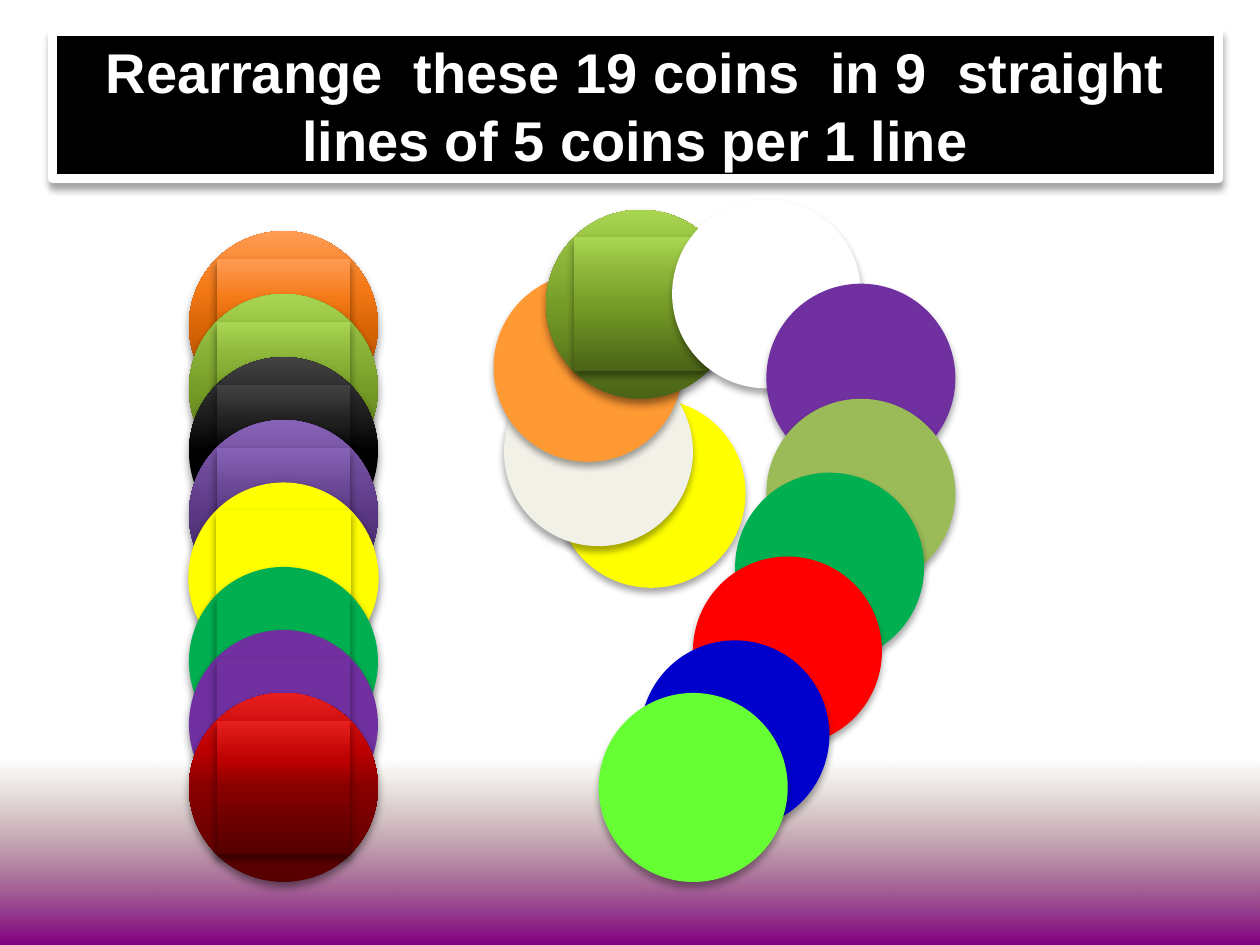
from math import sqrt
from lxml.etree import SubElement
from pptx import Presentation
from pptx.dml.color import RGBColor as RGB
from pptx.enum.shapes import MSO_SHAPE as SHAPE
from pptx.enum.text import MSO_ANCHOR as ANCHOR, PP_ALIGN as ALIGN
from pptx.oxml.ns import qn
from pptx.util import Cm, Pt

TITLE = "Rearrange  these 19 coins  in 9  straight lines of 5 coins per 1 line"
COLORS = {
    "black": "000000", "white": "FFFFFF", "yellow": "FFFF00", "cream": "F2F1E8",
    "amber": "FF9933", "purple": "7030A0", "olive": "9BBB59", "green": "00B050",
    "red": "FF0000", "blue": "0000CC", "lime": "66FF33",
}
GRADIENTS = {
    "orange shine": ("8B3F00", "DA6606", "F47917", "FF9C54"),
    "green shine": ("4A6316", "769C27", "89B137", "A9D651"),
    "black shine": ("000000", "000000", "1D1D1D", "424242"),
    "purple shine": ("372152", "593782", "6A4895", "8763B7"),
    "red shine": ("540000", "880000", "BC0000", "E71F1F"),
}
SHINE_STOPS = (0, 50, 70, 100)
LOOP = [
    ("yellow", 11.22, 8.04), ("cream", 10.16, 7.2), ("amber", 9.95, 5.5),
    ("green shine", 11.01, 4.23), ("white", 13.55, 4.02), ("purple", 15.45, 5.72),
    ("olive", 15.45, 8.04), ("green", 14.82, 9.53), ("red", 13.97, 11.22),
    ("blue", 12.91, 12.91), ("lime", 12.07, 13.97),
]
STACKS = [
    (4.66, ["orange shine", "green shine", "black shine", "purple shine", "yellow"]),
    (11.43, ["green", "purple", "red shine"]),
]
STACK_X, STACK_STEP = 3.81, 1.27
COIN = 3.81
CORE = COIN / sqrt(2)
SOFT = {"alpha": 35, "blur": 4, "dist": 3}
STRONG = {"alpha": 45, "blur": 5, "dist": 3}


def add_color(parent, color, alpha=100):
    clr = SubElement(parent, qn("a:srgbClr"), val=color)
    if alpha < 100:
        SubElement(clr, qn("a:alpha"), val=str(alpha * 1000))


def set_gradient(sp, stops, angle):
    sp.fill.gradient()
    sp.fill.gradient_angle = angle
    gs_lst = sp.element.spPr.find(".//" + qn("a:gsLst"))
    for gs in list(gs_lst):
        gs_lst.remove(gs)
    for pos, color, alpha in stops:
        add_color(SubElement(gs_lst, qn("a:gs"), pos=str(pos * 1000)), color, alpha)


def set_shadow(sp, alpha, blur, dist):
    effects = sp.element.spPr.find(qn("a:effectLst"))
    shadow = SubElement(effects, qn("a:outerShdw"), blurRad=str(Pt(blur)),
                        dist=str(Pt(dist)), dir="5400000", rotWithShape="0")
    add_color(shadow, COLORS["black"], alpha)


def add_shape(shapes, kind, x, y, w, h, fill=None, line=None, shadow=None):
    sp = shapes.add_shape(kind, Cm(x), Cm(y), Cm(w), Cm(h))
    sp.shadow.inherit = False
    if fill in GRADIENTS:
        set_gradient(sp, [(pos, c, 100) for pos, c in zip(SHINE_STOPS, GRADIENTS[fill])], 90)
    elif fill:
        sp.fill.solid()
        sp.fill.fore_color.rgb = RGB.from_string(COLORS[fill])
    if line:
        color, width = line
        sp.line.color.rgb = RGB.from_string(COLORS[color])
        sp.line.width = Pt(width)
    else:
        sp.line.fill.background()
    if shadow:
        set_shadow(sp, **shadow)
    return sp


def add_coin(shapes, fill, x, y, shadow, core_shadow, line=None):
    group = shapes.add_group_shape()
    inset = (COIN - CORE) / 2
    add_shape(group.shapes, SHAPE.OVAL, x, y, COIN, COIN, fill, line, shadow)
    add_shape(group.shapes, SHAPE.RECTANGLE, x + inset, y + inset, CORE, CORE,
              fill, line, core_shadow)


def add_title(shapes):
    sp = add_shape(shapes, SHAPE.RECTANGLE, 1.06, 0.64, 23.5, 2.96,
                   "black", ("white", 5), SOFT)
    tf = sp.text_frame
    tf.word_wrap = True
    tf.vertical_anchor = ANCHOR.MIDDLE
    p = tf.paragraphs[0]
    p.alignment = ALIGN.CENTER
    r = p.add_run()
    r.text = TITLE
    for name, value in {"name": "Arial", "size": Pt(32), "bold": True}.items():
        setattr(r.font, name, value)
    r.font.color.rgb = RGB.from_string(COLORS["white"])


def main():
    prs = Presentation()
    prs.slide_width, prs.slide_height = Cm(25.4), Cm(19.05)
    shapes = prs.slides.add_slide(prs.slide_layouts[6]).shapes
    band = add_shape(shapes, SHAPE.RECTANGLE, 0, 15.32, 25.4, 3.73)
    set_gradient(band, [(0, "765E2F", 0), (100, "800080", 100)], 270)
    for fill, x, y in LOOP:
        shiny = fill in GRADIENTS
        add_coin(shapes, fill, x, y, STRONG if shiny else SOFT, STRONG if shiny else None)
    for top, fills in STACKS:
        for i, fill in enumerate(fills):
            line = ("yellow", 0.75) if fill == "yellow" else None
            add_coin(shapes, fill, STACK_X, top + i * STACK_STEP, STRONG, STRONG, line)
    add_title(shapes)
    prs.save("out.pptx")


if __name__ == "__main__":
    main()
